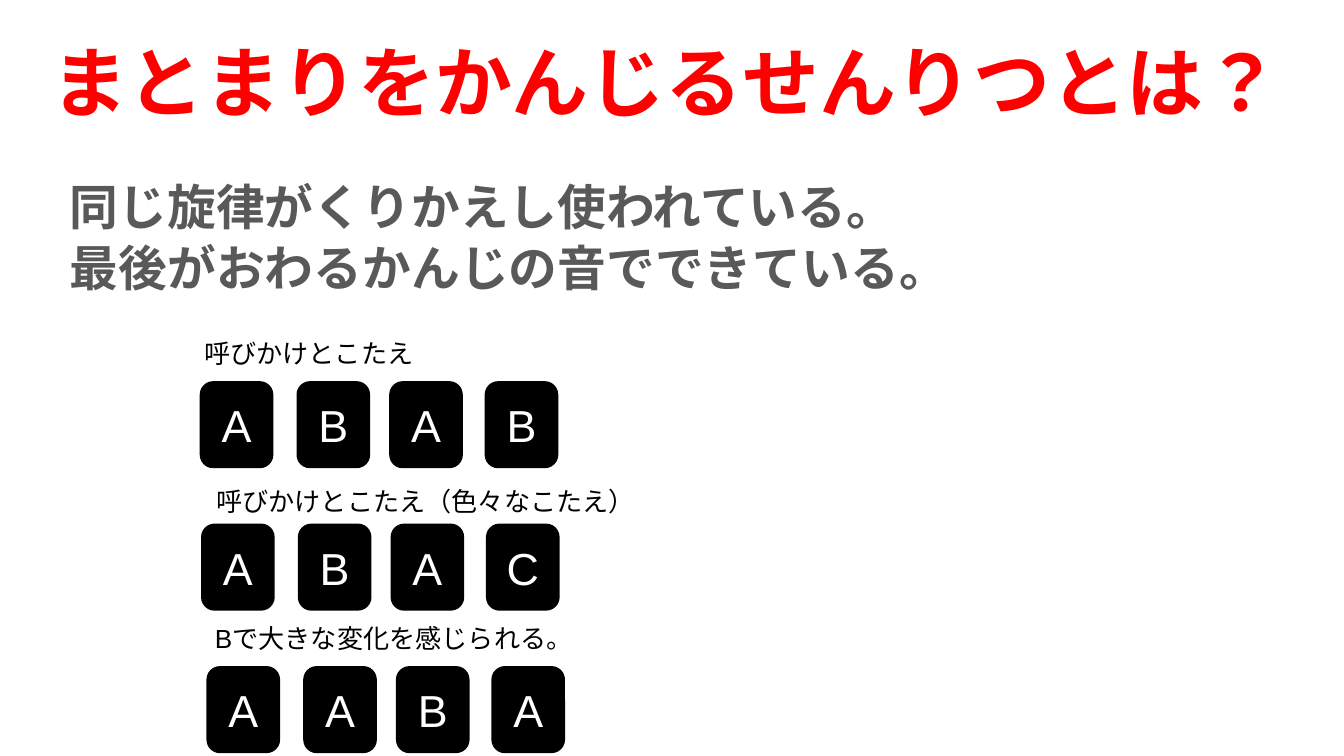
from pptx import Presentation
from pptx.dml.color import RGBColor
from pptx.enum.lang import MSO_LANGUAGE_ID
from pptx.enum.shapes import MSO_SHAPE
from pptx.enum.text import MSO_ANCHOR, MSO_AUTO_SIZE, PP_ALIGN
from pptx.oxml.ns import qn
from pptx.util import Inches, Pt

RED = RGBColor(0xFF, 0x00, 0x00)
GRAY = RGBColor(0x59, 0x59, 0x59)
BLACK = RGBColor(0x00, 0x00, 0x00)
WHITE = RGBColor(0xFF, 0xFF, 0xFF)


def write(paragraph, text, size, color, bold=False):
    run = paragraph.add_run()
    run.text = text
    run.font.name = "Arial"
    run.font.size = Pt(size)
    run.font.bold = bold
    run.font.color.rgb = color
    run.font.language_id = MSO_LANGUAGE_ID.JAPANESE
    # East Asian typeface
    properties = run._r.get_or_add_rPr()
    properties.append(properties.makeelement(qn("a:ea"), {"typeface": "Arial"}))


def place(shape, left, top, width, height):
    shape.left, shape.top = Inches(left), Inches(top)
    shape.width, shape.height = Inches(width), Inches(height)
    frame = shape.text_frame
    frame.word_wrap = True
    frame.auto_size = MSO_AUTO_SIZE.NONE
    frame.vertical_anchor = MSO_ANCHOR.TOP
    frame.margin_left = frame.margin_right = Inches(0.1)
    frame.margin_top = frame.margin_bottom = Inches(0.1)
    paragraph = frame.paragraphs[0]
    paragraph.alignment = PP_ALIGN.LEFT
    paragraph.space_before = Pt(0)
    return paragraph


# Slide in 16:9
presentation = Presentation()
presentation.slide_width = Inches(10)
presentation.slide_height = Inches(10 * 9 / 16)
slide = presentation.slides.add_slide(presentation.slide_layouts[3])

# Title
title = place(slide.shapes.title, 0.28, 0.16, 9.65, 1.1)
write(title, "まとまりをかんじるせんりつとは？", 41.2, RED, bold=True)

# Two statements, one per body placeholder
statements = [
    (1, 1.25, "同じ旋律がくりかえし使われている。"),
    (2, 1.7, "最後がおわるかんじの音でできている。"),
]
for index, top, text in statements:
    paragraph = place(slide.placeholders[index], 0.42, top, 10, 0.61)
    properties = paragraph._p.get_or_add_pPr()
    properties.set("marL", "0")
    properties.set("indent", "0")
    paragraph.line_spacing = 0.95
    properties.append(properties.makeelement(qn("a:buNone"), {}))
    write(paragraph, text, 26.1, GRAY, bold=True)

# Melody patterns: letters, tile left and top, caption left and top, caption
patterns = [
    ("AABA", 1.55, 4.97, 1.5, 4.58, "Bで大きな変化を感じられる。"),
    ("ABAB", 1.5, 2.85, 1.42, 2.46, "呼びかけとこたえ"),
    ("ABAC", 1.51, 3.91, 1.51, 3.56, "呼びかけとこたえ（色々なこたえ）"),
]
TILE_OFFSETS = (0, 0.72, 1.41, 2.12)

for letters, left, top, caption_left, caption_top, text in patterns:
    group = slide.shapes.add_group_shape()

    # Letter tiles
    for letter, offset in zip(letters, TILE_OFFSETS):
        tile = group.shapes.add_shape(
            MSO_SHAPE.ROUNDED_RECTANGLE, Inches(left + offset), Inches(top),
            Inches(0.52), Inches(0.62))
        tile.shadow.inherit = False
        tile.fill.solid()
        tile.fill.fore_color.rgb = BLACK
        tile.line.color.rgb = BLACK
        tile.line.width = Pt(2)
        tile.text_frame.vertical_anchor = MSO_ANCHOR.MIDDLE
        paragraph = tile.text_frame.paragraphs[0]
        paragraph.alignment = PP_ALIGN.CENTER
        write(paragraph, letter, 24, WHITE)

    # Caption
    caption = group.shapes.add_textbox(
        Inches(caption_left), Inches(caption_top), Inches(3.82), Inches(0.34))
    caption.text_frame.word_wrap = True
    caption.text_frame.auto_size = MSO_AUTO_SIZE.SHAPE_TO_FIT_TEXT
    write(caption.text_frame.paragraphs[0], text, 14, BLACK)

presentation.save("out.pptx")
